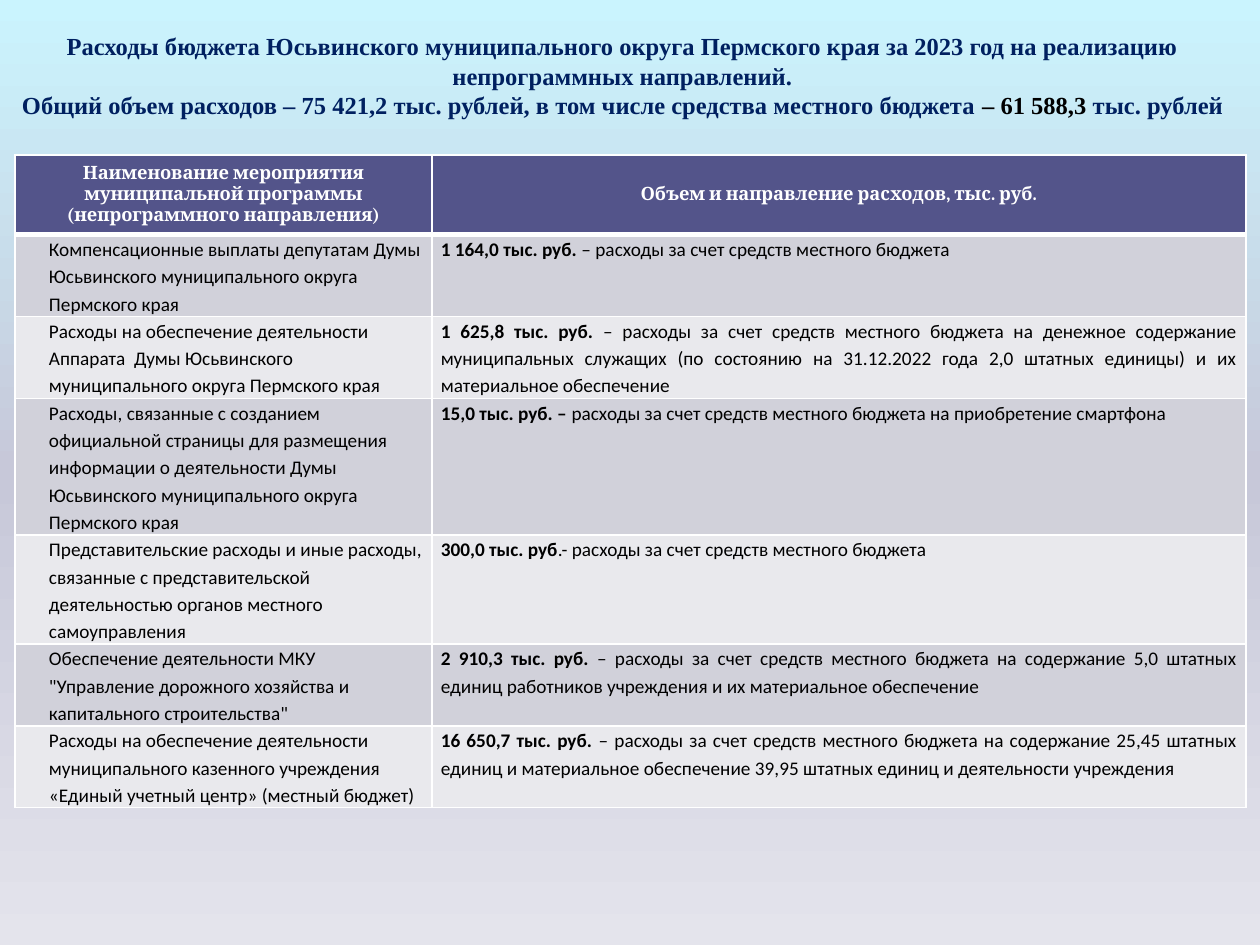
import copy

import pptx
import pptx.dml.color
import pptx.enum.text
import pptx.oxml
import pptx.oxml.ns
import pptx.util

Pt = pptx.util.Pt
Align = pptx.enum.text.PP_ALIGN
Anchor = pptx.enum.text.MSO_ANCHOR

HUES = {"navy": "002060", "black": "000000", "white": "FFFFFF",
        "head": "53548A", "dark": "D1D1DA", "light": "E9E9ED",
        "sky": "CAF4FE", "mist": "C7C8D9", "pale": "E4E4EC"}

FONTS = {
    "title": {"name": "Times New Roman", "size": Pt(14), "bold": True},
    "head": {"name": "Cambria", "size": Pt(10.5), "bold": True},
    "body": {"name": "Calibri", "size": Pt(11), "bold": False},
}

INSETS = {"margin_left": Pt(5), "margin_right": Pt(5),
          "margin_top": 0, "margin_bottom": 0}

TITLE = ("Расходы бюджета Юсьвинского муниципального округа Пермского края за 2023 год "
         "на реализацию непрограммных направлений.")
TOTAL = [
    ("Общий объем расходов – 75 421,2 тыс. рублей, в том числе средства местного бюджета ", "navy"),
    ("– 61 588,3 ", "black"),
    ("тыс. рублей", "navy"),
]

HEADS = ["Наименование мероприятия муниципальной программы (непрограммного направления)",
         "Объем и направление расходов, тыс. руб."]

# Item, amount in bold, purpose
COSTS = [
    ("Компенсационные выплаты депутатам Думы Юсьвинского муниципального округа Пермского края",
     "1 164,0 тыс. руб. ",
     "– расходы за счет средств местного бюджета"),
    ("Расходы на обеспечение деятельности Аппарата  Думы Юсьвинского муниципального округа "
     "Пермского края",
     "1 625,8 тыс. руб. ",
     "– расходы за счет средств местного бюджета на денежное содержание муниципальных служащих "
     "(по состоянию на 31.12.2022 года 2,0 штатных единицы) и их материальное обеспечение"),
    ("Расходы, связанные с созданием официальной страницы для размещения информации "
     "о деятельности Думы Юсьвинского муниципального округа Пермского края",
     "15,0 тыс. руб. – ",
     "расходы за счет средств местного бюджета на приобретение смартфона"),
    ("Представительские расходы и иные расходы, связанные с представительской деятельностью "
     "органов местного самоуправления",
     "300,0 тыс. руб",
     ".- расходы за счет средств местного бюджета"),
    ("Обеспечение деятельности МКУ \"Управление дорожного хозяйства и капитального строительства\"",
     "2 910,3 тыс. руб. ",
     "– расходы за счет средств местного бюджета на содержание 5,0 штатных единиц работников "
     "учреждения и их материальное обеспечение"),
    ("Расходы на обеспечение деятельности муниципального казенного учреждения "
     "«Единый учетный центр» (местный бюджет)",
     "16 650,7 тыс. руб. ",
     "– расходы за счет средств местного бюджета на содержание 25,45 штатных единиц "
     "и материальное обеспечение 39,95 штатных единиц и деятельности учреждения"),
]


def apply(item, values):
    for key, value in values.items():
        setattr(item, key, value)


def color(name):
    return pptx.dml.color.RGBColor.from_string(HUES[name])


class Page:
    def __init__(self, deck):
        self.slide = deck.slides.add_slide(deck.slide_layouts[5])

    def back(self, names):
        """Vertical gradient with evenly spaced stops."""
        fill = self.slide.background.fill
        fill.gradient()
        fill.gradient_angle = 270
        stops = self.slide.element.xpath(".//a:gsLst")[0]
        while len(stops) < len(names):
            stops.append(copy.deepcopy(stops[0]))
        for i, (stop, name) in enumerate(zip(fill.gradient_stops, names)):
            stop.position = i / (len(names) - 1)
            stop.color.rgb = color(name)

    def run(self, para, text, style, hue, **more):
        run = para.add_run()
        run.text = text
        apply(run.font, {**FONTS[style], **more})
        run.font.color.rgb = color(hue)

    def title(self, text, parts):
        shape = self.slide.shapes.title
        apply(shape, {"left": 0, "top": Pt(3.6), "width": Pt(711.4), "height": Pt(79.2)})
        apply(shape.text_frame, {"word_wrap": True, "vertical_anchor": Anchor.MIDDLE})
        para = shape.text_frame.paragraphs[0]
        para.alignment = Align.CENTER
        self.run(para, text, "title", "navy")
        para.add_line_break()
        for part, hue in parts:
            self.run(para, part, "title", hue)

    def cell(self, cell, hue, top=1, low=1):
        """Draw white borders, then fill the cell; return its paragraph."""
        props = cell._tc.get_or_add_tcPr()
        for side, width in zip("LRTB", (1, 1, top, low)):
            props.append(pptx.oxml.parse_xml(
                f'<a:ln{side} {pptx.oxml.ns.nsdecls("a")} w="{Pt(width)}"><a:solidFill>'
                f'<a:srgbClr val="{HUES["white"]}"/></a:solidFill></a:ln{side}>'))
        cell.fill.solid()
        cell.fill.fore_color.rgb = color(hue)
        return cell.text_frame.paragraphs[0]

    def table(self, heads, rows):
        widths, tall, row_tall = (238.3, 465.1), 45.4, 36
        grid = self.slide.shapes.add_table(
            len(rows) + 1, len(heads), Pt(8.6), Pt(88.6),
            Pt(sum(widths)), Pt(tall + row_tall * len(rows))).table
        for col, width in zip(grid.columns, widths):
            col.width = Pt(width)
        for i, row in enumerate(grid.rows):
            row.height = Pt(row_tall if i else tall)

        # Header row
        for i, text in enumerate(heads):
            cell = grid.cell(0, i)
            para = self.cell(cell, "head", low=3)
            cell.vertical_anchor = Anchor.MIDDLE
            para.alignment = Align.CENTER
            self.run(para, text, "head", "white")

        # Cost rows in alternating bands
        for i, (item, sum_, use) in enumerate(rows, 1):
            paras = []
            for cell in grid.rows[i].cells:
                para = self.cell(cell, "dark" if i % 2 else "light", top=3 if i == 1 else 1)
                apply(cell, INSETS)
                para.line_spacing = 1.15
                paras.append(para)
            left, right = paras
            left._p.get_or_add_pPr().set("marL", str(Pt(14.4)))
            self.run(left, item, "body", "black")
            right.alignment = Align.JUSTIFY
            self.run(right, sum_, "body", "black", bold=True)
            self.run(right, use, "body", "black")


def main():
    deck = pptx.Presentation()
    apply(deck, {"slide_width": Pt(720), "slide_height": Pt(540)})
    page = Page(deck)
    page.back(["sky", "mist", "pale"])
    page.title(TITLE, TOTAL)
    page.table(HEADS, COSTS)
    deck.save("out.pptx")


if __name__ == "__main__":
    main()
